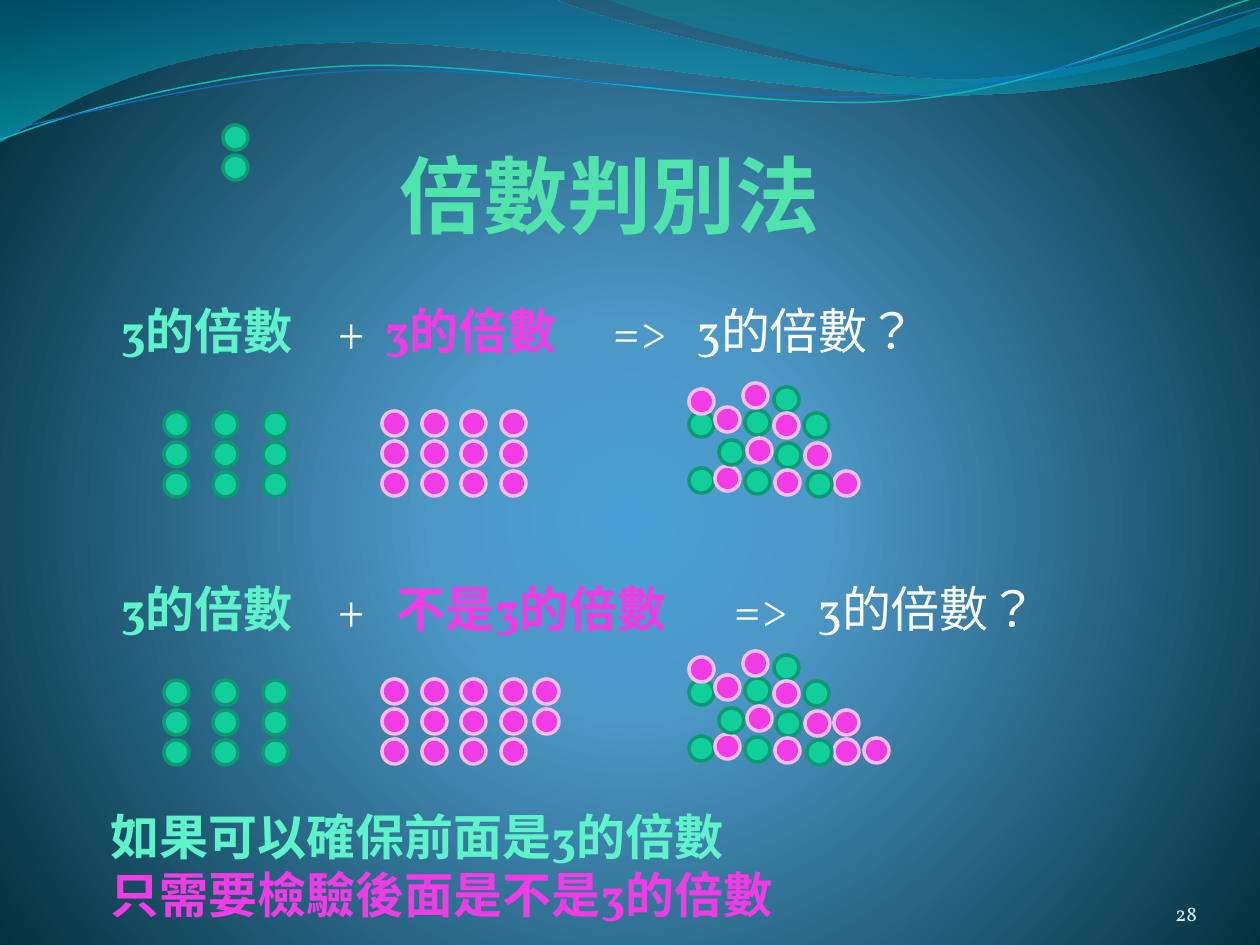
from itertools import product
from math import cos, radians, sin

from lxml.etree import SubElement
from pptx import Presentation
from pptx.dml.color import RGBColor
from pptx.enum.lang import MSO_LANGUAGE_ID as Language
from pptx.enum.shapes import MSO_SHAPE as Preset
from pptx.enum.text import MSO_ANCHOR as Anchor, PP_ALIGN as Align
from pptx.oxml import parse_xml
from pptx.oxml.ns import nsdecls, qn
from pptx.util import Emu, Pt

EMU_PER_PX = 914400 / 126

WHITE = RGBColor(0xFF, 0xFF, 0xFF)
TITLE_GREEN = RGBColor(0x50, 0xE3, 0xAC)
MINT = RGBColor(0x5F, 0xF3, 0xCA)
GREEN = RGBColor(0x10, 0xCF, 0x9B)
DARK_GREEN = RGBColor(0x0C, 0x99, 0x73)
PINK = RGBColor(0xF1, 0x3B, 0xE4)
PALE_PINK = RGBColor(0xFA, 0xBE, 0xF6)
PALE_BLUE = RGBColor(0xD1, 0xEA, 0xEE)
SKY = RGBColor(0x4A, 0xA0, 0xD6)
MID_SKY = RGBColor(0x4C, 0x98, 0xC7)
NIGHT = RGBColor(0x00, 0x2C, 0x38)
OCEAN = RGBColor(0x00, 0x74, 0xA1)
AQUA = RGBColor(0x00, 0xC6, 0xCF)
TEAL = RGBColor(0x00, 0xA1, 0xA9)
AZURE = RGBColor(0x00, 0x8B, 0xBF)
CYAN_LINE = RGBColor(0x0A, 0xB8, 0xBF)
BLUE_LINE = RGBColor(0x0F, 0x6F, 0xC6)

RIM = {GREEN: DARK_GREEN, PINK: PALE_PINK}
DOT = 25
TILT = 2.7

WIDE_WAVE = [
    [(0, 0)], [(554, -1)],
    [(600, 21), (837, 79), (955, 79)], [(1075, 79), (1207, 33), (1260, 11)],
    [(1261, 45)],
    [(1239, 55), (1096, 96), (940, 95)], [(784, 95), (481, 35), (324, 43)],
    [(163, 45), (58, 105), (-1, 142)],
]
CORNER_WAVE = [
    [(604, -1)],
    [(641, 14), (859, 78), (969, 82)], [(1079, 87), (1211, 40), (1260, 26)],
    [(1260, 0)],
]
CYAN_CURVE = [
    [(0, 140)],
    [(60, 117), (199, 72), (349, 66)], [(498, 59), (747, 112), (898, 101)],
    [(1050, 89), (1182, 19), (1257, -3)],
]
BLUE_CURVE = [
    [(0, 131)],
    [(59, 121), (207, 77), (357, 71)], [(508, 64), (752, 106), (903, 95)],
    [(1053, 84), (1186, 26), (1260, 8)],
]

GREEN_GRID = list(product((164, 213, 263), range(412, 473, 30)))
PINK_GRID = list(product((382, 422, 461, 501), range(411, 472, 30)))
MIXED_PILE = [
    (GREEN, [(689, 412), (774, 387), (689, 468)]),
    (PINK, [(715, 407), (834, 471), (715, 466)]),
    (GREEN, [(745, 410), (719, 440), (745, 469)]),
    (PINK, [(689, 389), (747, 438), (743, 383)]),
    (GREEN, [(804, 413), (776, 443), (807, 472)]),
    (PINK, [(774, 413), (805, 443), (775, 470)]),
]
COUNTERS = [(GREEN, GREEN_GRID), (PINK, PINK_GRID), *MIXED_PILE]
LEFTOVERS = [(534, 679), (534, 709), (864, 738), (834, 710)]
CASE_STEP = 268


def px(length):
    return Emu(round(length * EMU_PER_PX))


def turn(segments, degrees, center):
    c, s = cos(radians(degrees)), sin(radians(degrees))
    cx, cy = center
    return [
        [(cx + (x - cx) * c - (y - cy) * s, cy + (x - cx) * s + (y - cy) * c)
         for x, y in segment]
        for segment in segments
    ]


class SlideBuilder:
    font_name = "Vollkorn"
    font_size = 28

    def __init__(self, slide):
        self.slide = slide

    def gradient(self, owner, fill, stops, direction):
        fill.gradient()
        plain = owner.xpath(".//a:gradFill")[0]
        marks = "".join(
            f'<a:gs pos="{place * 1000}"><a:srgbClr val="{color}">'
            f'<a:alpha val="{alpha * 1000}"/></a:srgbClr></a:gs>'
            for place, color, alpha in stops
        )
        plain.getparent().replace(plain, parse_xml(
            f'<a:gradFill {nsdecls("a")} rotWithShape="1">'
            f"<a:gsLst>{marks}</a:gsLst>{direction}</a:gradFill>"
        ))

    def background(self, stops):
        self.gradient(
            self.slide.element, self.slide.background.fill, stops,
            '<a:path path="circle"><a:fillToRect l="10000" t="110000"'
            ' r="10000" b="100000"/></a:path>',
        )

    def outline(self, segments, close):
        start, *rest = [(px(x), px(y)) for segment in segments for x, y in segment]
        builder = self.slide.shapes.build_freeform(*start)
        builder.add_line_segments(rest, close=close)
        shape = builder.convert_to_shape()
        shape.shadow.inherit = False
        sides = iter(shape.element.xpath(".//a:lnTo"))
        for segment in segments[1:]:
            legs = [next(sides) for _ in segment]
            if len(legs) == 3:
                bend = parse_xml(f'<a:cubicBezTo {nsdecls("a")}/>')
                legs[0].addprevious(bend)
                for leg in legs:
                    bend.append(leg[0])
                    leg.getparent().remove(leg)
        return shape

    def wave(self, segments, stops):
        shape = self.outline(segments, True)
        shape.line.fill.background()
        self.gradient(shape.element, shape.fill, stops, '<a:lin ang="5400000" scaled="0"/>')

    def curve(self, segments, center, color, width):
        shape = self.outline(turn(segments, TILT, center), False)
        shape.rotation = -TILT
        shape.fill.background()
        shape.line.color.rgb = color
        shape.line.width = Pt(width)

    def dots(self, color, places, drop=0, shapes=None):
        shapes = shapes or self.slide.shapes
        for x, y in places:
            dot = shapes.add_shape(Preset.OVAL, px(x), px(y + drop), px(DOT), px(DOT))
            dot.shadow.inherit = False
            dot.fill.solid()
            dot.fill.fore_color.rgb = color
            dot.line.color.rgb = RIM[color]
            dot.line.width = Pt(2)

    def counters(self, drop):
        group = self.slide.shapes.add_group_shape()
        for color, places in COUNTERS:
            self.dots(color, places, drop, group.shapes)

    def text(self, at, lines, inset=6, size=font_size, font=font_name,
             align=Align.LEFT, anchor=Anchor.TOP, before=0, tabs=()):
        box = self.slide.shapes.add_textbox(*map(px, at))
        frame = box.text_frame
        frame.word_wrap = True
        frame.vertical_anchor = anchor
        frame.margin_left = frame.margin_right = px(inset)
        frame.margin_top = frame.margin_bottom = px(inset)
        paragraph = frame.paragraphs[0]
        paragraph.alignment = align
        paragraph.space_before = Pt(before)
        paragraph.font.name = font
        paragraph.font.size = Pt(size)
        for number, line in enumerate(lines):
            if number:
                paragraph.add_line_break()
            for words, color, bold in line:
                run = paragraph.add_run()
                run.text = words
                run.font.language_id = Language.TRADITIONAL_CHINESE
                run.font.bold = bold
                run.font.color.rgb = color
        if tabs:
            defaults = box.element.xpath(".//a:defRPr")[0]
            stops = parse_xml(f'<a:tabLst {nsdecls("a")}/>')
            for tab in tabs:
                SubElement(stops, qn("a:tab"), pos=str(px(tab)), algn="l")
            defaults.addprevious(stops)

    def question(self, top, addend, tabs):
        self.text((115, top, 1111, 118), [[
            ("3的倍數\t", MINT, True),
            ("+\t", WHITE, False),
            (f"{addend}\t", PINK, True),
            ("=>\t3的倍數？", WHITE, False),
        ]], before=5.6, tabs=tabs)


def main():
    deck = Presentation()
    deck.slide_width, deck.slide_height = px(1260), px(945)
    page = SlideBuilder(deck.slides.add_slide(deck.slide_layouts[6]))

    page.background([(0, SKY, 100), (25, MID_SKY, 100), (100, NIGHT, 100)])
    page.wave(WIDE_WAVE, [(0, OCEAN, 45), (100, AQUA, 55)])
    page.wave(CORNER_WAVE, [(0, TEAL, 30), (80, AZURE, 45)])
    page.curve(CYAN_CURVE, (629, 72), CYAN_LINE, 0.85)
    page.curve(BLUE_CURVE, (629, 74), BLUE_LINE, 0.75)

    page.text((74, 144, 1071, 100), [[("倍數判別法", TITLE_GREEN, True)]],
              inset=0, size=48, font="Calibri", align=Align.CENTER, anchor=Anchor.BOTTOM)
    page.question(294, "3的倍數", (217, 264, 492, 575))
    page.dots(GREEN, [(223, 125), (223, 155)])
    page.counters(0)
    page.question(572, "不是3的倍數", (217, 276, 613, 696))
    page.counters(CASE_STEP)
    page.dots(PINK, LEFTOVERS)

    page.text((105, 800, 1111, 118), [
        [("如果可以確保前面是3的倍數", MINT, True)],
        [("只需要檢驗後面是不是3的倍數", PINK, True)],
    ], before=5.6)
    page.text((1092, 876, 105, 50), [[("28", PALE_BLUE, False)]],
              inset=0, size=12, align=Align.RIGHT, anchor=Anchor.BOTTOM)
    deck.save("out.pptx")


if __name__ == "__main__":
    main()
